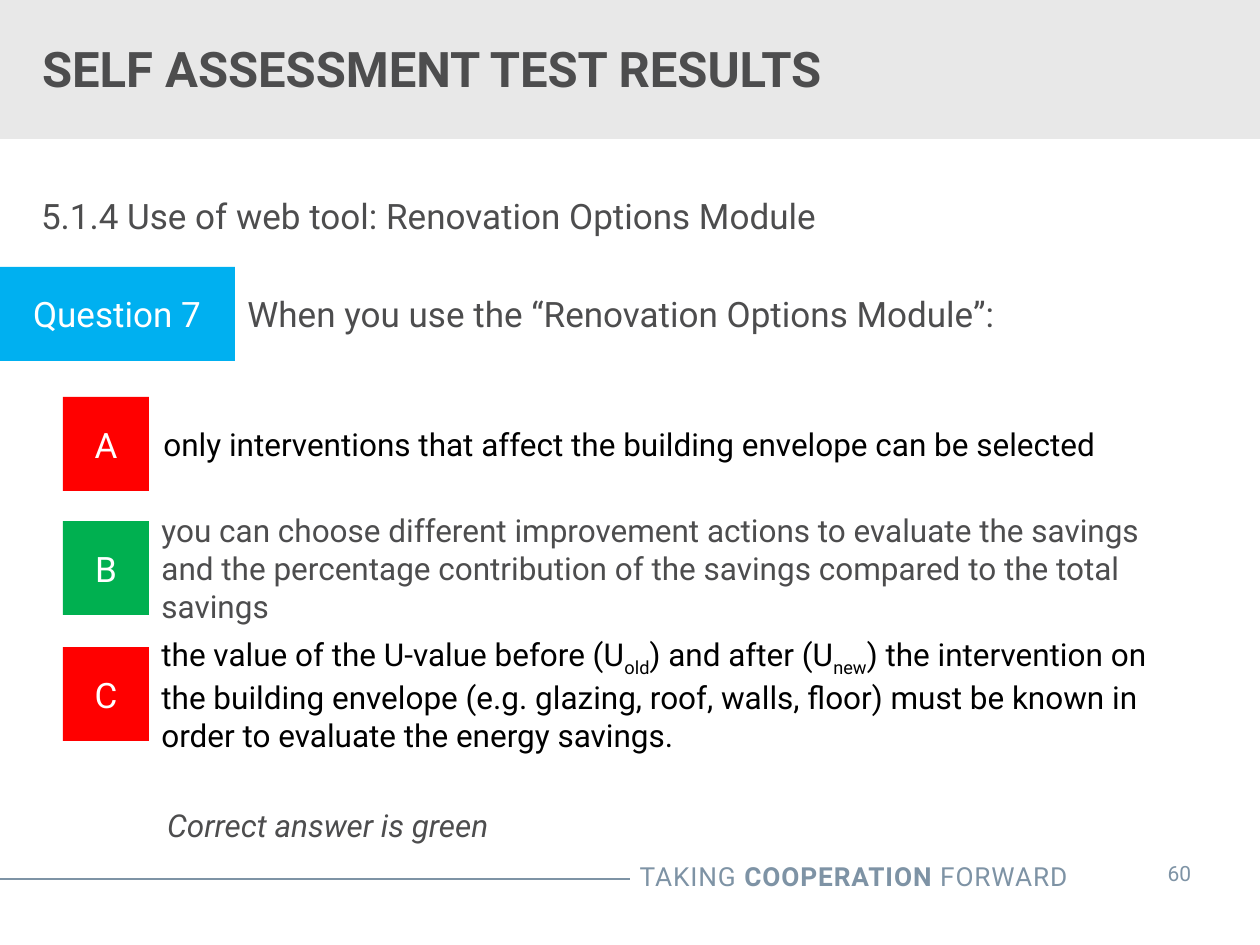
from pptx import Presentation
from pptx import util as u
from pptx.dml.color import RGBColor
from pptx.enum import shapes, text
from pptx.oxml.ns import qn
from lxml import etree

WHITE = RGBColor(0xFF, 0xFF, 0xFF)
BLACK = RGBColor(0x00, 0x00, 0x00)
GRAY = RGBColor(0x4D, 0x4D, 0x4E)
BAND = RGBColor(0xE8, 0xE8, 0xE8)
SLATE = RGBColor(0x7E, 0x93, 0xA5)
BLUE = RGBColor(0x00, 0xB0, 0xF0)
RED = RGBColor(0xFF, 0x00, 0x00)
GREEN = RGBColor(0x00, 0xB0, 0x50)

LEFT, CENTER, RIGHT = (text.PP_ALIGN.LEFT, text.PP_ALIGN.CENTER, text.PP_ALIGN.RIGHT)
TOP, MIDDLE = text.MSO_ANCHOR.TOP, text.MSO_ANCHOR.MIDDLE
NO_INSETS = dict(margin_left=0, margin_top=0, margin_right=0, margin_bottom=0)


def px(value):
    return u.Emu(round(value * 914400 / 126))


class SlideBuilder:
    """Holds the style and the current slide."""

    font_name = "Roboto"

    def __init__(self, slide):
        self.slide = slide

    def set_text(self, shape, runs, size, color, align=LEFT, anchor=MIDDLE, frame=None, **font):
        """Fill a shape with runs: plain strings or (string, run attributes)."""
        text_frame = shape.text_frame
        settings = dict(word_wrap=True, auto_size=text.MSO_AUTO_SIZE.NONE,
                        vertical_anchor=anchor, **(frame or {}))
        for name, value in settings.items():
            setattr(text_frame, name, value)
        paragraph = text_frame.paragraphs[0]
        paragraph.alignment = align
        paragraph.space_before = u.Pt(0)
        for item in [runs] if isinstance(runs, str) else runs:
            content, attributes = (item, {}) if isinstance(item, str) else item
            run = paragraph.add_run()
            run.text = content
            style = dict(name=self.font_name, size=u.Pt(size), bold=False) | font
            for name, value in style.items():
                setattr(run.font, name, value)
            run.font.color.rgb = color
            for name, value in attributes.items():
                run.font._element.set(name, value)
        return paragraph

    def placeholder(self, index, box, runs, size, **options):
        shape = self.slide.placeholders[index]
        for name, value in zip(("left", "top", "width", "height"), box):
            setattr(shape, name, px(value))
        paragraph = self.set_text(shape, runs, size, GRAY, **options)
        properties = paragraph._p.get_or_add_pPr()
        properties.set("marL", "0")
        properties.set("indent", "0")
        etree.SubElement(properties, qn("a:buNone"))

    def label(self, box, runs, size, color, **options):
        shape = self.slide.shapes.add_textbox(*map(px, box))
        self.set_text(shape, runs, size, color, **options)

    def block(self, box, fill, caption=None):
        shape = self.slide.shapes.add_shape(shapes.MSO_SHAPE.RECTANGLE, *map(px, box))
        shape.shadow.inherit = False
        shape.fill.solid()
        shape.fill.fore_color.rgb = fill
        shape.line.fill.background()
        if caption:
            self.set_text(shape, caption, 20, WHITE, align=CENTER)
        return shape

    def rule(self, start, end, y):
        line = self.slide.shapes.add_connector(
            shapes.MSO_CONNECTOR.STRAIGHT, px(start), px(y), px(end), px(y))
        line.line.color.rgb = SLATE
        line.line.width = u.Pt(0.75)
        etree.SubElement(line.element.spPr, qn("a:effectLst"))


def main():
    presentation = Presentation()
    presentation.slide_width, presentation.slide_height = px(1260), px(945)
    slide = presentation.slides.add_slide(presentation.slide_layouts[1])
    builder = SlideBuilder(slide)

    # Header band, behind the title
    band = builder.block((0, 0, 1260, 139), BAND)
    slide.shapes.title.element.addprevious(band.element)
    builder.placeholder(0, (-1, 20, 908, 95), "SELF ASSESSMENT TEST RESULTS", 28,
                        bold=True, frame=dict(margin_left=px(43)))

    # Section line
    builder.placeholder(1, (41, 194, 1179, 43),
                        "5.1.4 Use of web tool: Renovation Options Module", 20,
                        anchor=TOP, frame=NO_INSETS)

    # Question
    builder.block((-1, 267, 236, 94), BLUE, "Question 7")
    builder.label((235, 267, 1027, 94), "When you use the “Renovation Options Module”:", 20, GRAY)

    # Answers
    subscript = dict(baseline="-25000")
    answers = [
        ("A", 397, 151, RED, BLACK,
         "only interventions that affect the building envelope can be selected"),
        ("B", 521, 149, GREEN, GRAY,
         "you can choose different improvement actions to evaluate the savings and the "
         "percentage contribution of the savings compared to the total savings"),
        ("C", 647, 149, RED, BLACK,
         ["the value of the U-value before (U", ("old", subscript), ") and after (U",
          ("new", subscript), ") the intervention on the building envelope (e.g. glazing, "
          "roof, walls, floor) must be known in order to evaluate the energy savings."]),
    ]
    for letter, top, left, fill, color, answer in answers:
        builder.block((63, top, 86, 94), fill, letter)
        builder.label((left, top, 1027, 94), answer, 18, color)
    builder.label((167, 806, 500, 40), "Correct answer is green", 18, GRAY,
                  anchor=TOP, frame=NO_INSETS, italic=True)

    # Footer
    spacing = dict(spc="50")
    builder.rule(-1, 630, 879)
    builder.label((489, 854, 591, 44),
                  [("TAKING ", spacing), ("COOPERATION", spacing | dict(b="1")),
                   (" FORWARD", spacing)], 15, SLATE, align=RIGHT, anchor=TOP)
    builder.label((1133, 848, 93, 50), "60", 12, SLATE, align=CENTER, anchor=TOP,
                  frame=dict(margin_top=px(13)))

    presentation.save("out.pptx")


if __name__ == "__main__":
    main()
